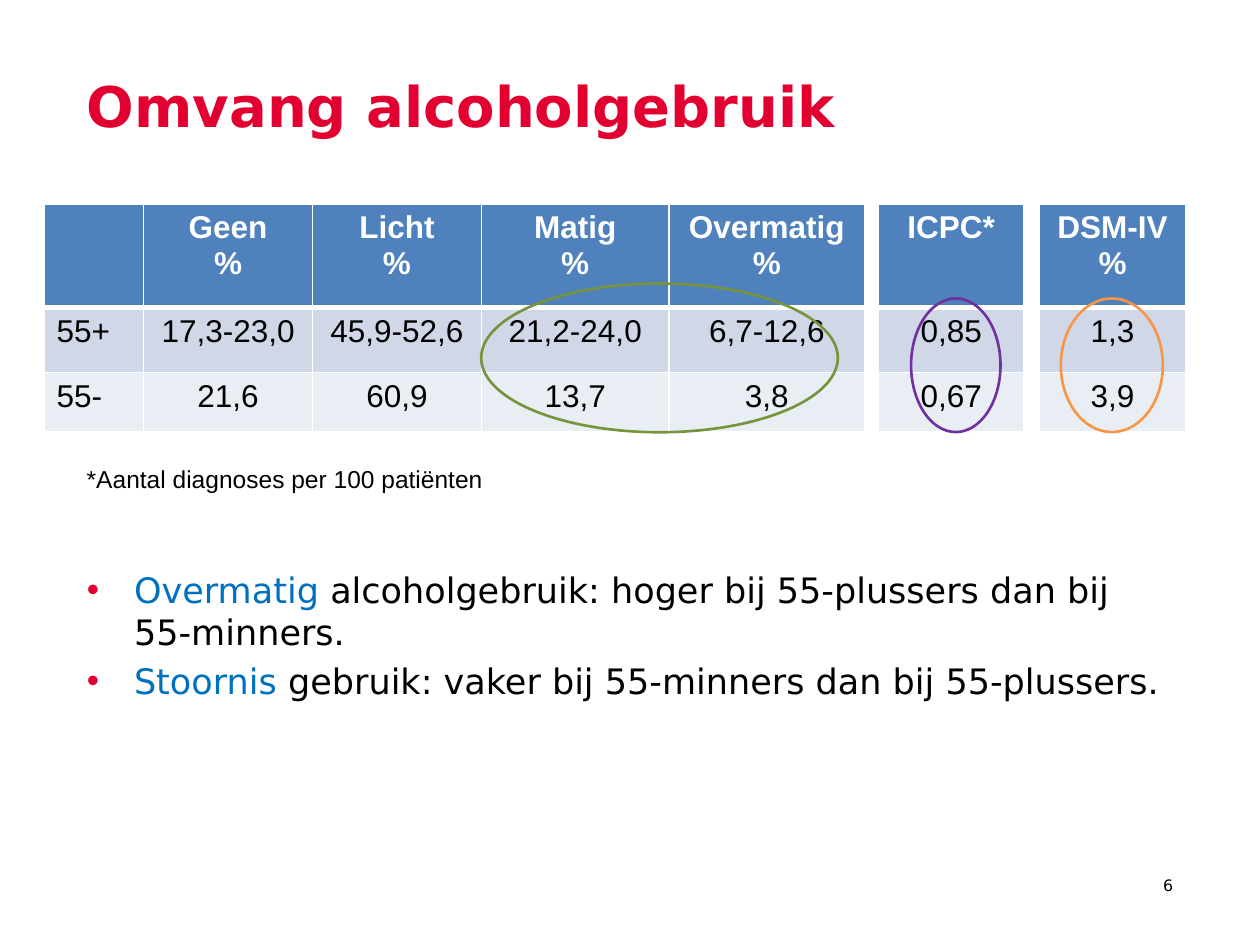
from lxml.etree import SubElement as Sub
from pptx import Presentation as Deck
from pptx.dml.color import RGBColor as RGB
from pptx.enum.shapes import MSO_SHAPE as Geo
from pptx.enum.text import PP_ALIGN as Align
from pptx.oxml.ns import qn
from pptx.util import Pt

RED = RGB(0xE2, 0x00, 0x31)
BLUE = RGB(0x00, 0x70, 0xC0)
HEAD = RGB(0x4F, 0x81, 0xBD)
BAND = RGB(0xD0, 0xD8, 0xE8)
PALE = RGB(0xE9, 0xED, 0xF4)
WHITE = RGB(0xFF, 0xFF, 0xFF)
BLACK = RGB(0x00, 0x00, 0x00)
GREEN = RGB(0x77, 0x93, 0x3C)
PURPLE = RGB(0x70, 0x30, 0xA0)
ORANGE = RGB(0xF7, 0x96, 0x46)

SANS = "DejaVu Sans"
TITLE = dict(name=SANS, size=Pt(32), bold=True, color=RED)
BODY = dict(name=SANS, size=Pt(20), color=BLACK)
KEY = dict(BODY, color=BLUE)
NOTE = dict(name="Arial", size=Pt(14), color=BLACK)
PAGE = dict(name=SANS, size=Pt(9), color=BLACK)
CELL = dict(name="Arial", size=Pt(18), bold=False, color=BLACK)
TOP = dict(CELL, bold=True, color=WHITE)

LEFT, WIDE = 42.5, 635
GRID_TOP = 116.6
ROWS = [59, 37.4, 33.8]
FILLS = [HEAD, BAND, PALE]
GRIDS = [
    (25.2, [56.9, 96.5, 96.5, 107.3, 111.6], [
        ["", "Geen\n%", "Licht\n%", "Matig\n%", "Overmatig\n%"],
        ["55+", "17,3-23,0", "45,9-52,6", "21,2-24,0", "6,7-12,6"],
        ["55-", "21,6", "60,9", "13,7", "3,8"],
    ]),
    (501.8, [83.5], [["ICPC*"], ["0,85"], ["0,67"]]),
    (594, [83.5], [["DSM-IV\n%"], ["1,3"], ["3,9"]]),
]
RINGS = [
    (275, 162, 203.8, 85, GREEN),
    (520.6, 170.6, 51.1, 76.3, PURPLE),
    (606.2, 170.6, 58.3, 76.3, ORANGE),
]
POINTS = [
    ("Overmatig", " alcoholgebruik: hoger bij 55-plussers dan bij 55-minners."),
    ("Stoornis", " gebruik: vaker bij 55-minners dan bij 55-plussers."),
]


def style(font, form):
    for key, val in form.items():
        if key == "color":
            font.color.rgb = val
        else:
            setattr(font, key, val)


def add_run(para, text, form):
    run = para.add_run()
    run.text = text
    style(run.font, form)


def add_box(slide, x, y, w, h):
    frame = slide.shapes.add_textbox(Pt(x), Pt(y), Pt(w), Pt(h)).text_frame
    frame.word_wrap = True
    return frame


def add_text(slide, x, y, w, h, text, form, align=Align.LEFT):
    para = add_box(slide, x, y, w, h).paragraphs[0]
    para.alignment = align
    add_run(para, text, form)


def add_points(slide, x, y, w, h):
    frame = add_box(slide, x, y, w, h)
    for i, (key, rest) in enumerate(POINTS):
        para = frame.add_paragraph() if i else frame.paragraphs[0]
        props = para._p.get_or_add_pPr()
        props.set("marL", str(Pt(27)))
        props.set("indent", str(Pt(-27)))
        tint = Sub(props, qn("a:buClr"))
        Sub(tint, qn("a:srgbClr"), val=str(RED))
        Sub(props, qn("a:buFont"), typeface="Arial")
        Sub(props, qn("a:buChar"), char="•")
        if i:
            para.space_before = Pt(4)
        add_run(para, key, KEY)
        add_run(para, rest, BODY)


def add_edges(cell, base):
    props = cell._tc.get_or_add_tcPr()
    for side in "LRTB":
        size = base if side == "B" else 1
        line = Sub(props, qn(f"a:ln{side}"), w=str(Pt(size)))
        fill = Sub(line, qn("a:solidFill"))
        Sub(fill, qn("a:srgbClr"), val=str(WHITE))


def fill_cell(cell, text, row, first):
    add_edges(cell, 1 if row else 3)
    cell.fill.solid()
    cell.fill.fore_color.rgb = FILLS[row]
    form = CELL if row else TOP
    frame = cell.text_frame
    for i, part in enumerate(text.split("\n")):
        para = frame.add_paragraph() if i else frame.paragraphs[0]
        para.alignment = Align.LEFT if first else Align.CENTER
        if part:
            add_run(para, part, form)
        else:
            style(para.font, form)


def add_grid(slide, x, cols, data):
    shape = slide.shapes.add_table(
        len(ROWS), len(cols), Pt(x), Pt(GRID_TOP), Pt(sum(cols)), Pt(sum(ROWS)))
    table = shape.table
    for col, w in zip(table.columns, cols):
        col.width = Pt(w)
    for row, h in zip(table.rows, ROWS):
        row.height = Pt(h)
    for r, line in enumerate(data):
        for c, text in enumerate(line):
            fill_cell(table.cell(r, c), text, r, c == 0 and len(cols) > 1)


def add_ring(slide, x, y, w, h, color):
    ring = slide.shapes.add_shape(Geo.OVAL, Pt(x), Pt(y), Pt(w), Pt(h))
    ring.shadow.inherit = False
    ring.fill.background()
    ring.line.color.rgb = color
    ring.line.width = Pt(1.5)


def main():
    deck = Deck()
    deck.slide_width, deck.slide_height = Pt(720), Pt(540)
    slide = deck.slides.add_slide(deck.slide_layouts[6])
    add_text(slide, 620.6, 496.8, 56.9, 28.8, "6", PAGE, Align.RIGHT)
    add_text(slide, LEFT, 37.4, WIDE, 62.6, "Omvang alcoholgebruik", TITLE)
    for grid in GRIDS:
        add_grid(slide, *grid)
    add_points(slide, LEFT, 321.1, WIDE, 113)
    add_text(slide, LEFT, 261.4, 436.3, 24.5,
             "*Aantal diagnoses per 100 patiënten", NOTE)
    for ring in RINGS:
        add_ring(slide, *ring)
    deck.save("out.pptx")


if __name__ == "__main__":
    main()
